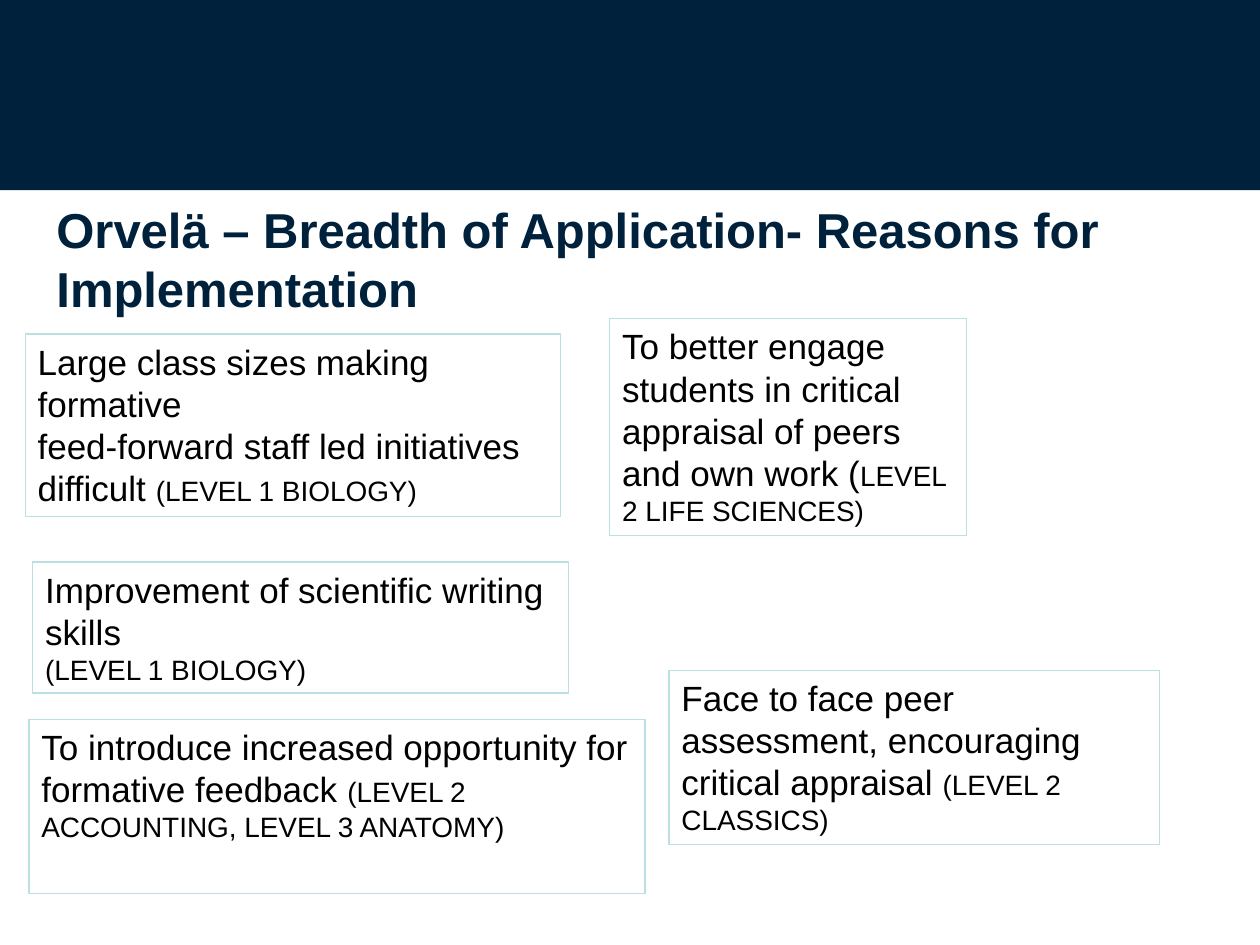
"""Build the slide on reasons for implementing Orvelä."""
from pptx import Presentation
from pptx.dml.color import RGBColor
from pptx.enum.shapes import MSO_SHAPE
from pptx.enum.text import MSO_ANCHOR, PP_ALIGN
from pptx.util import Inches, Pt

NAVY, PALE_TEAL, BLACK = "00213B", "BBE0E3", "000000"
REASON_SIZE, LEVEL_SIZE = 20, 16

TITLE = "Orvelä – Breadth of Application- Reasons for Implementation"
REASONS = [
    ((0.2, 2.65, 4.25, 1.45), [
        [("Large class sizes making formative", REASON_SIZE)],
        [("feed-forward staff led initiatives", REASON_SIZE)],
        [("difficult ", REASON_SIZE), ("(LEVEL 1 BIOLOGY)", LEVEL_SIZE)],
    ]),
    ((4.84, 2.53, 2.83, 1.72), [
        [("To better engage students in critical appraisal of peers and own work (", REASON_SIZE),
         ("LEVEL 2 LIFE SCIENCES)", LEVEL_SIZE)],
    ]),
    ((5.31, 5.32, 3.89, 1.38), [
        [("Face to face peer assessment, encouraging critical appraisal ", REASON_SIZE),
         ("(LEVEL 2 CLASSICS)", LEVEL_SIZE)],
    ]),
    ((0.23, 5.71, 4.89, 1.38), [
        [("To introduce increased opportunity for formative feedback ", REASON_SIZE),
         ("(LEVEL 2 ACCOUNTING, LEVEL 3 ANATOMY)", LEVEL_SIZE)],
    ]),
    ((0.26, 4.46, 4.25, 1.04), [
        [("Improvement of scientific writing skills", REASON_SIZE)],
        [("(LEVEL 1 BIOLOGY)", LEVEL_SIZE)],
    ]),
]


def rgb(value):
    return RGBColor.from_string(value)


def add_box(slide, place, fill=None, line=None):
    box = slide.shapes.add_shape(MSO_SHAPE.RECTANGLE, *map(Inches, place))
    box.shadow.inherit = False
    if fill:
        box.fill.solid()
        box.fill.fore_color.rgb = rgb(fill)
    else:
        box.fill.background()
    if line:
        box.line.color.rgb = rgb(line)
        box.line.width = Pt(0.75)
    else:
        box.line.fill.background()
    return box


def write(frame, paragraphs, color=BLACK, bold=False, anchor=MSO_ANCHOR.TOP):
    frame.word_wrap = True
    frame.vertical_anchor = anchor
    for index, pieces in enumerate(paragraphs):
        paragraph = frame.add_paragraph() if index else frame.paragraphs[0]
        paragraph.alignment = PP_ALIGN.LEFT
        for text, size in pieces:
            run = paragraph.add_run()
            run.text = text
            run.font.name = "Arial"
            run.font.size = Pt(size)
            run.font.bold = bold
            run.font.color.rgb = rgb(color)


def main():
    deck = Presentation()
    deck.slide_width, deck.slide_height = Inches(10), Inches(7.5)
    slide = deck.slides.add_slide(deck.slide_layouts[6])

    add_box(slide, (0, 0, 10, 1.51), fill=NAVY)

    title = slide.shapes.add_textbox(*map(Inches, (0.35, 1.9, 9.17, 0.75))).text_frame
    title.margin_bottom = Inches(0.5)
    write(title, [[(TITLE, 28)]], color=NAVY, bold=True, anchor=MSO_ANCHOR.MIDDLE)

    for place, paragraphs in REASONS:
        write(add_box(slide, place, line=PALE_TEAL).text_frame, paragraphs)

    deck.save("out.pptx")


if __name__ == "__main__":
    main()
